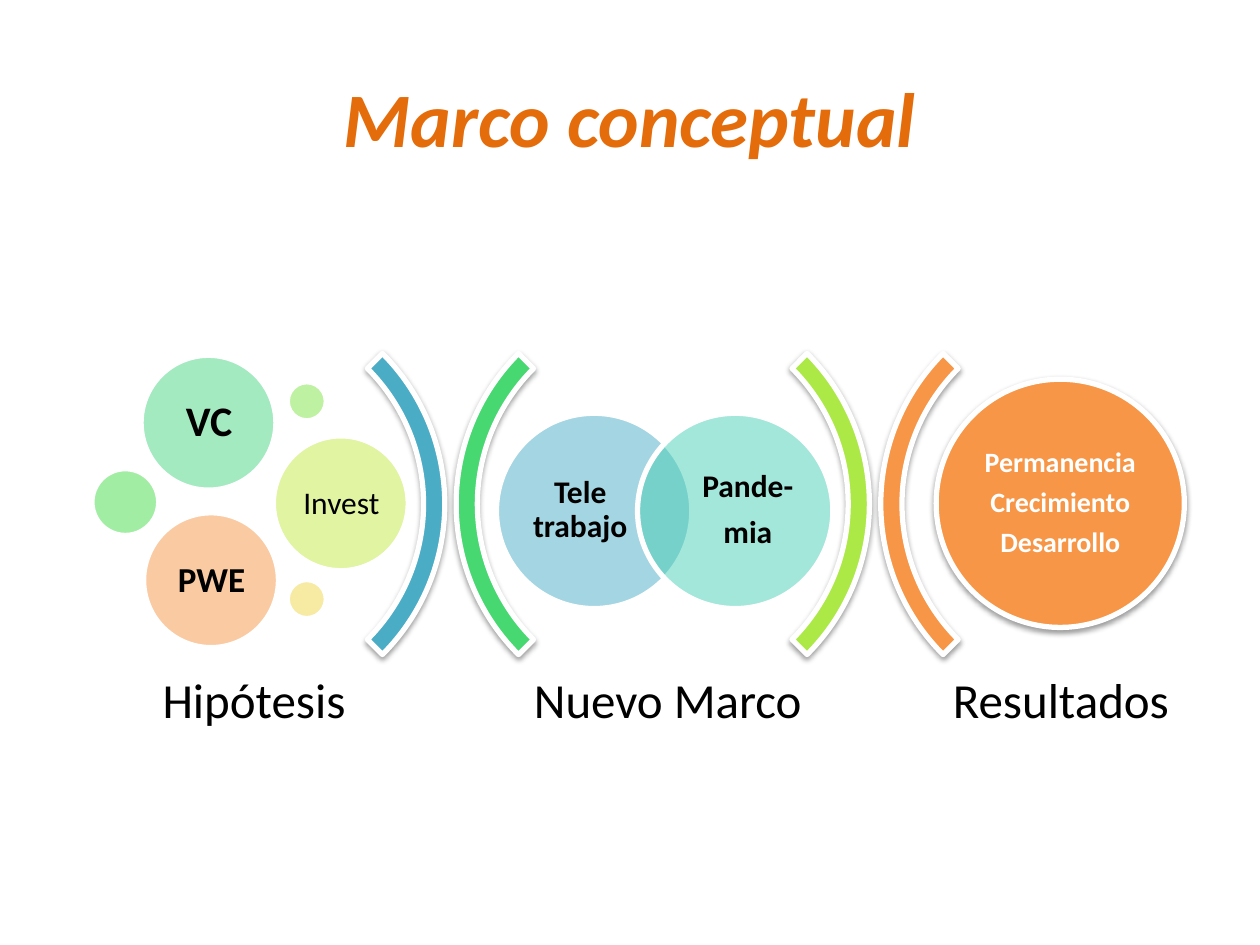
from lxml import etree
from pptx import Presentation
from pptx.dml.color import RGBColor
from pptx.enum.shapes import MSO_SHAPE as Shape
from pptx.enum.text import MSO_ANCHOR as Anchor, PP_ALIGN as Align
from pptx.oxml.ns import qn
from pptx.util import Inches, Pt


def add_figure(kind, box, color, opacity=100, shadow=False):
    """Add a filled shape with a white outline."""
    shape = slide.shapes.add_shape(kind, *[Inches(length) for length in box])
    shape.fill.solid()
    shape.fill.fore_color.rgb = RGBColor.from_string(color)
    shape.line.color.rgb = RGBColor.from_string("FFFFFF")
    shape.line.width = Pt(3)
    shape.shadow.inherit = False
    if opacity < 100:
        fill_color = shape.fill._xPr.find(qn("a:solidFill"))[0]
        etree.SubElement(fill_color, qn("a:alpha"), val=str(opacity * 1000))
    if shadow:
        effects = shape._element.spPr.find(qn("a:effectLst"))
        outer = etree.SubElement(effects, qn("a:outerShdw"), blurRad="40000",
                                 dist="20000", dir="5400000", rotWithShape="0")
        black = etree.SubElement(outer, qn("a:srgbClr"), val="000000")
        etree.SubElement(black, qn("a:alpha"), val="38000")
    return shape


def add_label(box, text, size, color="000000", bold=False, italic=False,
              inset=0.1, line_spacing=0.9, gap=0.35):
    """Add a centred text box; gap is the paragraph spacing per text size."""
    label = slide.shapes.add_textbox(*[Inches(length) for length in box])
    frame = label.text_frame
    frame.word_wrap = True
    frame.vertical_anchor = Anchor.MIDDLE
    frame.margin_left = frame.margin_right = Inches(inset)
    frame.margin_top = frame.margin_bottom = Inches(inset)
    frame.text = text
    for paragraph in frame.paragraphs:
        paragraph.alignment = Align.CENTER
        paragraph.line_spacing = line_spacing
        paragraph.space_after = Pt(round(size * gap, 1))
        font = paragraph.runs[0].font
        font.name, font.size = "Calibri", Pt(size)
        font.bold, font.italic = bold, italic
        font.color.rgb = RGBColor.from_string(color)


presentation = Presentation()
presentation.slide_width = Inches(10)
presentation.slide_height = Inches(7.5)
slide = presentation.slides.add_slide(presentation.slide_layouts[6])

# Title
add_label((0.5, 0.3, 9, 1.25), "Marco conceptual", 44, "E46C0A", bold=True,
          italic=True, line_spacing=1.0, gap=0)

# Brackets between the three stages: left, rotation, colour
for left, rotation, color in [(0.15, 90, "4BACC6"), (3.62, 270, "47D872"),
                              (3.52, 90, "ACE946"), (6.99, 270, "F79646")]:
    bracket = add_figure(Shape.BLOCK_ARC, (left, 2.31, 3.38, 3.38), color, shadow=True)
    bracket.rotation = rotation
    # Start and end angles in 100000ths of the raw value: 225 and 315 degrees
    for index, value in enumerate((225 * 0.6, 315 * 0.6, 0.05)):
        bracket.adjustments[index] = value

# Stage names
for left, name in [(0.78, "Hipótesis "), (4.02, "Nuevo Marco"), (7.14, "Resultados")]:
    add_label((left, 5.24, 2.56, 0.68), name, 28, inset=0.12)

# New framework: two overlapping circles
for left, color, label_left, text in [(3.94, "4BACC6", 4.16, "Tele trabajo"),
                                      (5.06, "49CEB6", 5.49, "Pande-\nmia")]:
    add_figure(Shape.OVAL, (left, 3.28, 1.55, 1.55), color, opacity=50)
    add_label((label_left, 3.46, 0.89, 1.18), text, 18, bold=True, inset=0)

# Hypotheses: named circles and small accents
for left, top, diameter, color, text, size, bold, inset in [
        (1.12, 2.82, 1.07, "48D684", "VC", 24, True, 0.1),
        (0.73, 3.72, 0.53, "47DD4B", "", 0, False, 0),
        (2.28, 3.03, 0.31, "80E446", "", 0, False, 0),
        (2.17, 3.46, 1.07, "C3EB46", "Invest", 18, False, 0.07),
        (2.28, 4.6, 0.31, "F1D746", "", 0, False, 0),
        (1.14, 4.07, 1.07, "F79646", "PWE", 20, True, 0.08)]:
    add_figure(Shape.OVAL, (left, top, diameter, diameter), color, opacity=50)
    if text:
        add_label((left + 0.16, top + 0.16, 0.76, 0.76), text, size, bold=bold, inset=inset)

# Results
add_figure(Shape.OVAL, (7.43, 3.01, 1.97, 1.97), "F79646", shadow=True)
add_label((7.72, 3.3, 1.39, 1.39), "Permanencia\nCrecimiento\nDesarrollo", 16,
          "FFFFFF", bold=True, inset=0.07)

presentation.save("out.pptx")
